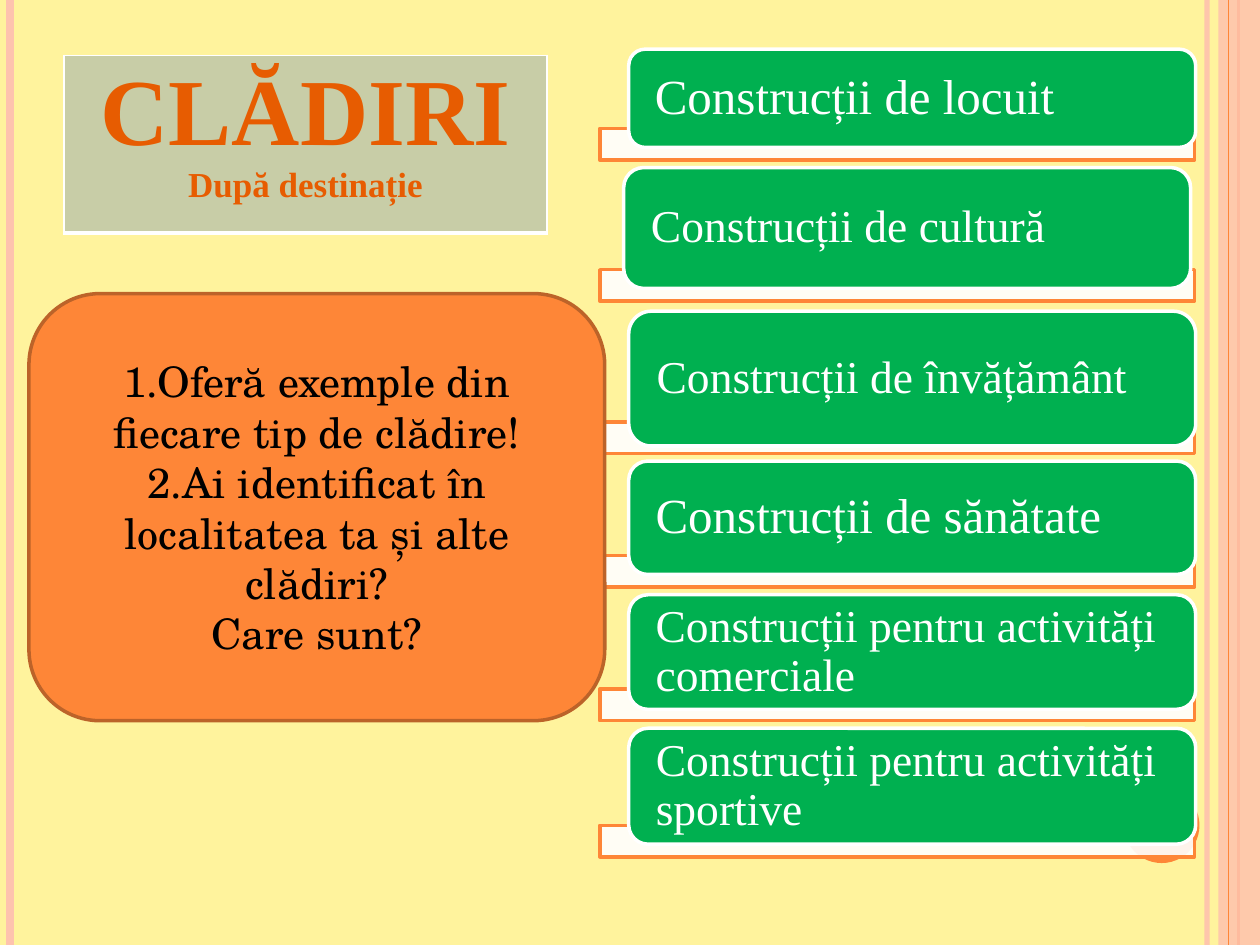
import pptx
import pptx.util
import pptx.dml.color
import pptx.enum.shapes
import pptx.enum.text
import pptx.oxml
import pptx.oxml.ns

Inches = pptx.util.Inches
Pt = pptx.util.Pt
shape_kind = pptx.enum.shapes.MSO_SHAPE
middle = pptx.enum.text.MSO_ANCHOR.MIDDLE
center = pptx.enum.text.PP_ALIGN.CENTER
namespace = pptx.oxml.ns.nsdecls("a")


def paint(target, color, alpha=100):
    target.solid()
    target.fore_color.rgb = pptx.dml.color.RGBColor.from_string(color)
    if alpha < 100:
        clr = target._xPr.find(".//" + pptx.oxml.ns.qn("a:srgbClr"))
        clr.append(pptx.oxml.parse_xml(f'<a:alpha {namespace} val="{alpha * 1000}"/>'))


def add_box(kind, place, color, alpha=100, line=None):
    box = page.shapes.add_shape(kind, *[Inches(length) for length in place])
    box.shadow.inherit = False
    paint(box.fill, color, alpha)
    if line:
        paint(box.line.fill, line)
        box.line.width = Pt(2)
    else:
        box.line.fill.background()
    return box


deck = pptx.Presentation()
deck.slide_width, deck.slide_height = Inches(10), Inches(7.5)
page = deck.slides.add_slide(deck.slide_layouts[6])
paint(page.background.fill, "FFF39D")

rules = [(9.58, "FEC3AE", 3, 93), (0.08, "FEC3AE", 4.5, 100),
         (9.83, "FE8637", 1.5, 100), (9.75, "FE8637", 0.75, 100)]
for x, color, width, alpha in rules:
    if x == 9.75:
        add_box(shape_kind.RECTANGLE, (9.67, 0, 0.33, 7.5), "FEC3AE", 87)
    rule = page.shapes.add_connector(
        pptx.enum.shapes.MSO_CONNECTOR.STRAIGHT, Inches(x), 0, Inches(x), Inches(7.5))
    paint(rule.line.fill, color, alpha)
    rule.line.width = Pt(width)
    rule._element.spPr.append(pptx.oxml.parse_xml(f"<a:effectLst {namespace}/>"))
add_box(shape_kind.OVAL, (8.92, 6.25, 0.6, 0.6), "FE8637")

categories = [
    ("Construcții de locuit", 28, 4.99, 0.39, 0.78, 1.02),
    ("Construcții de cultură", 26, 4.95, 1.33, 0.96, 2.14),
    ("Construcții de învățământ", 26, 4.99, 2.47, 1.07, 3.35),
    ("Construcții de sănătate", 28, 4.99, 3.66, 0.9, 4.41),
    ("Construcții pentru activități comerciale", 26, 4.99, 4.72, 0.91, 5.47),
    ("Construcții pentru activități sportive", 26, 4.99, 5.78, 0.92, 6.55),
]
card_frame = {"word_wrap": True, "vertical_anchor": middle,
              "margin_left": Inches(0.17), "margin_right": Inches(0.17),
              "margin_top": 0, "margin_bottom": 0}
for label, size, left, top, height, bar_top in categories:
    add_box(shape_kind.RECTANGLE, (4.76, bar_top, 4.72, 0.25), "FFFFFF", 90, "FE8637")
    card = add_box(shape_kind.ROUNDED_RECTANGLE, (left, top, 4.5, height),
                   "00B050", line="FFFFFF")
    for name, value in card_frame.items():
        setattr(card.text_frame, name, value)
    para = card.text_frame.paragraphs[0]
    para.alignment = pptx.enum.text.PP_ALIGN.LEFT
    para.line_spacing = 0.9
    span = para.add_run()
    span.text = label
    for name, value in {"name": "Times New Roman", "size": Pt(size)}.items():
        setattr(span.font, name, value)
    paint(span.font.fill, "FFFFFF")

questions = add_box(shape_kind.ROUNDED_RECTANGLE, (0.23, 2.33, 4.57, 3.39),
                    "FE8637", line="BC6329")
questions.text_frame.word_wrap = True
questions.text_frame.vertical_anchor = middle

table_shape = page.shapes.add_table(1, 1, Inches(0.51), Inches(0.44), Inches(3.83), Inches(1.41))
table = table_shape.table
table.first_row = table.horz_banding = False
cell = table.cell(0, 0)
paint(cell.fill, "3668C4", 27)
for position, (side, width) in enumerate([("L", 1), ("R", 1), ("T", 1), ("B", 3)]):
    cell._tc.tcPr.insert(position, pptx.oxml.parse_xml(
        f'<a:ln{side} {namespace} w="{Pt(width)}"><a:solidFill>'
        f'<a:srgbClr val="FFFFFF"/></a:solidFill></a:ln{side}>'))

question_font = {"name": "TeX Gyre Schola", "size": Pt(24)}
title_font = {"name": "Times New Roman", "bold": True}
centered_texts = [
    (questions.text_frame, "000000", [
        ("1.Oferă exemple din fiecare tip de clădire!", question_font),
        ("2.Ai identificat în localitatea ta și alte clădiri?", question_font),
        ("Care sunt?", question_font)]),
    (cell.text_frame, "E75C01", [
        ("CLĂDIRI", {**title_font, "size": Pt(54)}),
        ("După destinație", {**title_font, "size": Pt(20)})]),
]
for frame, color, lines in centered_texts:
    for index, (text, font_format) in enumerate(lines):
        para = frame.add_paragraph() if index else frame.paragraphs[0]
        para.alignment = center
        span = para.add_run()
        span.text = text
        for name, value in font_format.items():
            setattr(span.font, name, value)
        paint(span.font.fill, color)

deck.save("out.pptx")
